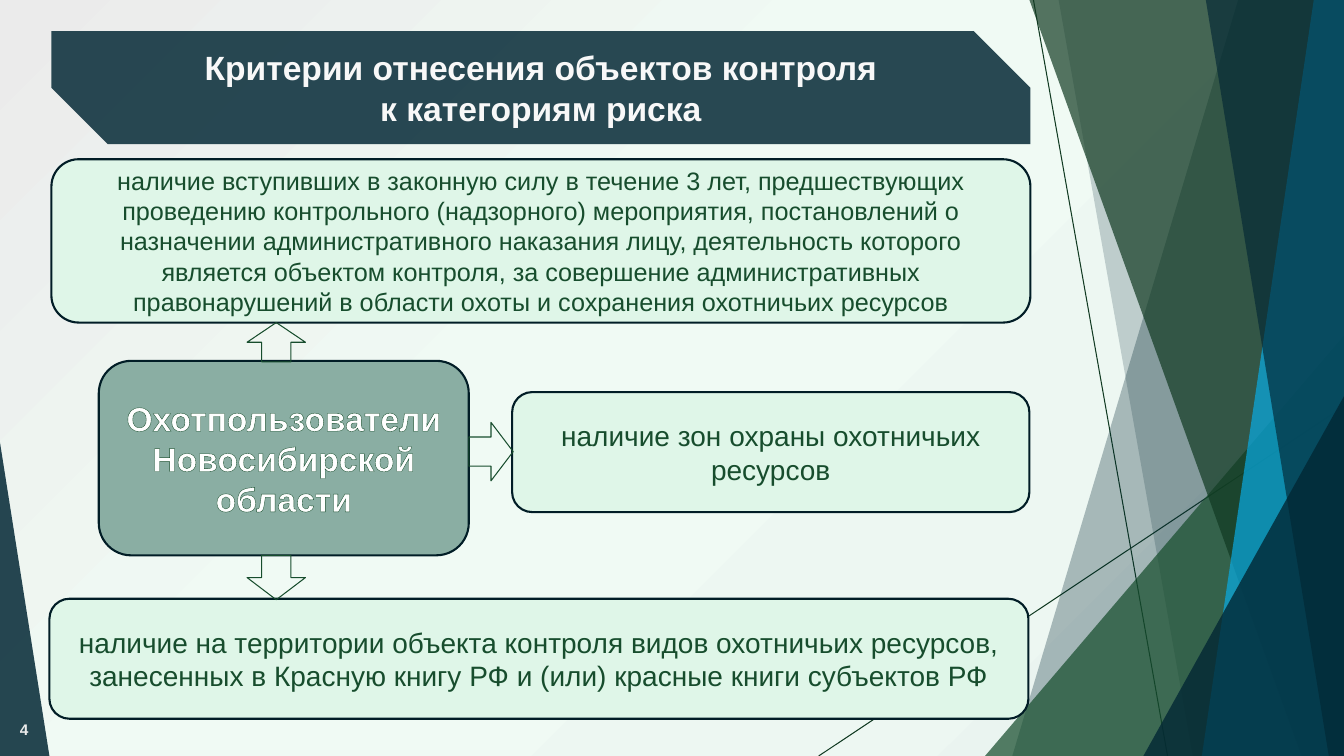
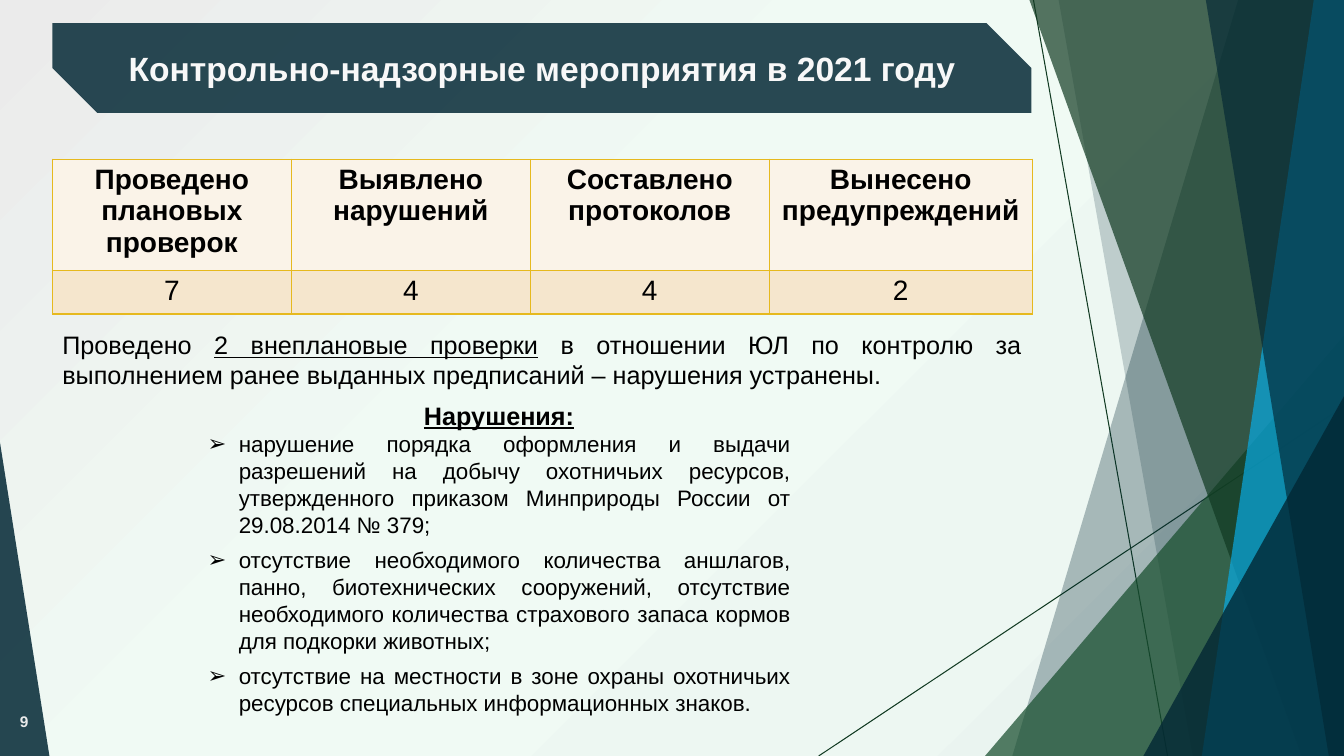
from pptx import Presentation
from pptx.dml.color import RGBColor
from pptx.enum.shapes import MSO_CONNECTOR, MSO_SHAPE
from pptx.enum.text import MSO_ANCHOR, PP_ALIGN
from pptx.oxml import parse_xml
from pptx.oxml.ns import nsdecls, qn
from pptx.util import Inches, Pt
from lxml.etree import SubElement

# Colours and font
NAVY = RGBColor(0x02, 0x27, 0x34)
EDGE = RGBColor(0x01, 0x1D, 0x26)
GREEN = RGBColor(0x17, 0x4D, 0x2D)
DARK = RGBColor(0x11, 0x3A, 0x22)
BLUE = RGBColor(0x09, 0xAB, 0xE4)
MINT = RGBColor(0xDF, 0xF6, 0xE8)
SAGE = RGBColor(0x8A, 0xAE, 0xA3)
CREAM = RGBColor(0xFA, 0xF3, 0xE8)
SAND = RGBColor(0xF5, 0xE6, 0xCD)
GOLD = RGBColor(0xE6, 0xB9, 0x1E)
PALE = RGBColor(0xF8, 0xF8, 0xF8)
GRAY = RGBColor(0xEB, 0xEB, 0xEB)
WHITE = RGBColor(0xFF, 0xFF, 0xFF)
BLACK = RGBColor(0, 0, 0)
FONT = "Arial"
WIDE, HIGH = 13.33, 7.5
STOPS = [(0, "EAF4F0"), (58, "F0FAF4"), (100, "EBEBEB")]

# Side decoration, from back to front
LINES = [((10.25, 0), (11.58, HIGH)), ((WIDE, 4.03), (8.12, HIGH))]
# Bands reach the right edge: top x, bottom x, colour, opacity
# Triangles stand on the bottom edge: left, top, width, apex, colour, opacity
DECOR = [
    ("band", 12.28, 10.04, NAVY, 30),
    ("band", 10.5, 11.83, NAVY, 20),
    ("peak", 9.77, 3.33, 3.56, 1, GREEN, 72),
    ("band", 10.21, 12.91, DARK, 70),
    ("band", 13.03, 11.92, BLUE, 70),
    ("band", 11.96, 13.18, NAVY, 65),
    ("peak", 11.34, 3.93, 1.99, 1, NAVY, 80),
    ("peak", 0, 4.39, 0.49, 0, NAVY, 85),
]

# Slide 1 content
RISK = ["Критерии отнесения объектов контроля", "к категориям риска"]
USERS = ((0.98, 3.58, 3.67, 1.93), "Охотпользователи Новосибирской области")
RULES = [
    ((0.49, 5.94, 9.71, 1.19), 20,
     "наличие на территории объекта контроля видов охотничьих ресурсов, "
     "занесенных в Красную книгу РФ и (или) красные книги субъектов РФ"),
    ((0.51, 1.58, 9.71, 1.62), 18,
     "наличие вступивших в законную силу в течение 3 лет, предшествующих "
     "проведению контрольного (надзорного) мероприятия, постановлений о "
     "назначении административного наказания лицу, деятельность которого "
     "является объектом контроля, за совершение административных "
     "правонарушений в области охоты и сохранения охотничьих ресурсов"),
    ((5.08, 3.89, 5.13, 1.19), 20, "наличие зон охраны охотничьих ресурсов"),
]
ARROWS = [((2.45, 5.51, 0.58, 0.44), 0), ((2.45, 3.2, 0.58, 0.39), 180),
          ((4.58, 4.26, 0.58, 0.44), 270)]

# Slide 2 content
CHECKS = ["Контрольно-надзорные мероприятия в 2021 году"]
TABLE = [["Проведено плановых проверок", "Выявлено нарушений",
          "Составлено протоколов", "Вынесено предупреждений"],
         ["7", "4", "4", "2"]]
COLS = [2.37, 2.37, 2.37, 2.61]
ROWS = [1.03, 0.41]
EXTRA = [("Проведено ", False), ("2 внеплановые проверки", True),
         (" в отношении ЮЛ по контролю за выполнением ранее выданных "
          "предписаний – нарушения устранены.", False)]
FAULTS = [
    "нарушение порядка оформления и выдачи разрешений на добычу охотничьих "
    "ресурсов, утвержденного приказом Минприроды России от 29.08.2014 № 379;",
    "отсутствие необходимого количества аншлагов, панно, биотехнических "
    "сооружений, отсутствие необходимого количества страхового запаса кормов "
    "для подкорки животных;",
    "отсутствие на местности в зоне охраны охотничьих ресурсов специальных "
    "информационных знаков.",
]


def inch(box):
    return [Inches(v) for v in box]


def write(frame, text, size=18, color=BLACK, bold=False, line=False,
          align=PP_ALIGN.CENTER, after=0, bullet=None, rim=None, more=False):
    """Add one paragraph; text is a string or (string, underlined) runs."""
    para = frame.add_paragraph() if more else frame.paragraphs[0]
    para.alignment = align
    if after:
        para.space_after = Pt(after)
    if bullet:
        props = para._p.get_or_add_pPr()
        props.set("marL", str(Inches(0.31)))
        props.set("indent", str(-Inches(0.31)))
        SubElement(props, qn("a:buFont")).set("typeface", FONT)
        SubElement(props, qn("a:buChar")).set("char", bullet)
    for words, under in [(text, line)] if isinstance(text, str) else text:
        run = para.add_run()
        run.text = words
        font = run.font
        font.name, font.size, font.bold = FONT, Pt(size), bold
        font.underline = under
        font.color.rgb = color
        if rim:
            run._r.get_or_add_rPr().insert(0, stroke("ln", rim, 0.5))


def stroke(tag, color, width):
    return parse_xml(
        f'<a:{tag} {nsdecls("a")} w="{Pt(width)}"><a:solidFill>'
        f'<a:srgbClr val="{color}"/></a:solidFill></a:{tag}>')


def style(shape, fill=None, alpha=100, edge=None, width=1.5):
    shape.shadow.inherit = False
    if fill is None:
        shape.fill.background()
    else:
        shape.fill.solid()
        shape.fill.fore_color.rgb = fill
        if alpha < 100:
            tone = shape._element.spPr.find(".//" + qn("a:srgbClr"))
            SubElement(tone, qn("a:alpha")).set("val", str(alpha * 1000))
    if edge is None:
        shape.line.fill.background()
    else:
        shape.line.color.rgb = edge
        shape.line.width = Pt(width)


def put(slide, kind, box, **look):
    shape = slide.shapes.add_shape(kind, *inch(box))
    style(shape, **look)
    shape.text_frame.word_wrap = True
    shape.text_frame.vertical_anchor = MSO_ANCHOR.MIDDLE
    return shape


def label(slide, box, anchor=MSO_ANCHOR.TOP):
    frame = slide.shapes.add_textbox(*inch(box)).text_frame
    frame.word_wrap = True
    frame.vertical_anchor = anchor
    return frame


def paint(master):
    """Give the master its radial background."""
    master.background.fill.gradient()
    old = master._element.find(".//" + qn("p:bgPr") + "/" + qn("a:gradFill"))
    stops = "".join(f'<a:gs pos="{pos * 1000}"><a:srgbClr val="{tone}"/></a:gs>'
                    for pos, tone in STOPS)
    old.getparent().replace(old, parse_xml(
        f'<a:gradFill {nsdecls("a")} rotWithShape="1"><a:gsLst>{stops}</a:gsLst>'
        '<a:path path="circle"><a:fillToRect l="100000" t="100000"/></a:path>'
        '</a:gradFill>'))


def start(deck, title, box, page, level):
    """Add a slide with decoration, title band and page number."""
    slide = deck.slides.add_slide(deck.slide_layouts[6])
    for head, tail in LINES:
        line = slide.shapes.add_connector(MSO_CONNECTOR.STRAIGHT,
                                          *inch(head + tail))
        line.line.color.rgb = DARK
        line.line.width = Pt(0.75)
        SubElement(line._element.spPr, qn("a:effectLst"))
    for kind, *part, color, alpha in DECOR:
        if kind == "band":
            top, base = part
            pen = slide.shapes.build_freeform(Inches(top), 0)
            pen.add_line_segments([inch(p) for p in (
                (WIDE, 0), (WIDE, HIGH), (base, HIGH))])
            style(pen.convert_to_shape(), color, alpha)
        else:
            left, top, width, apex = part
            peak = put(slide, MSO_SHAPE.ISOSCELES_TRIANGLE,
                       (left, top, width, HIGH - top), fill=color, alpha=alpha)
            peak.adjustments[0] = apex
    band = put(slide, MSO_SHAPE.SNIP_2_DIAG_RECTANGLE, box, fill=NAVY, alpha=84)
    band.adjustments[0], band.adjustments[1] = 0, 0.5
    for i, text in enumerate(title):
        write(band.text_frame, text, size=24, color=PALE, bold=True, more=i > 0)
    write(label(slide, (0, level, 0.38, 0.4), MSO_ANCHOR.MIDDLE), page,
          size=11, color=GRAY, bold=True, align=PP_ALIGN.RIGHT)
    return slide


def risks(deck):
    slide = start(deck, RISK, (0.51, 0.31, 9.71, 1.12), "4", 7.04)
    box, text = USERS
    hub = put(slide, MSO_SHAPE.ROUNDED_RECTANGLE, box, fill=SAGE, edge=EDGE)
    write(hub.text_frame, text, size=24, color=WHITE, bold=True, rim=GREEN)
    for box, size, text in RULES:
        rule = put(slide, MSO_SHAPE.ROUNDED_RECTANGLE, box, fill=MINT, edge=EDGE)
        write(rule.text_frame, text, size=size, color=GREEN)
    for box, turn in ARROWS:
        arrow = put(slide, MSO_SHAPE.DOWN_ARROW, box, edge=GREEN, width=0.75)
        arrow.rotation = turn


def checks(deck):
    slide = start(deck, CHECKS, (0.52, 0.23, 9.71, 0.89), "9", 6.96)
    # Results table
    table = slide.shapes.add_table(
        len(ROWS), len(COLS), *inch((0.52, 1.58, sum(COLS), sum(ROWS)))).table
    for col, width in zip(table.columns, COLS):
        col.width = Inches(width)
    for r, (texts, height) in enumerate(zip(TABLE, ROWS)):
        table.rows[r].height = Inches(height)
        for c, text in enumerate(texts):
            cell = table.cell(r, c)
            cell.fill.solid()
            cell.fill.fore_color.rgb = SAND if r else CREAM
            write(cell.text_frame, text, size=20, bold=r == 0)
            for i, side in enumerate(("lnL", "lnR", "lnT", "lnB")):
                cell._tc.get_or_add_tcPr().insert(i, stroke(side, GOLD, 1))
    # Notes under the table
    write(label(slide, (0.52, 3.22, 9.71, 0.71)), EXTRA,
          align=PP_ALIGN.JUSTIFY)
    faults = label(slide, (1.96, 3.92, 5.98, 3.26))
    write(faults, "Нарушения:", bold=True, line=True)
    for text in FAULTS:
        write(faults, text, size=16, align=PP_ALIGN.JUSTIFY, after=6,
              bullet="➢", more=True)


def main():
    deck = Presentation()
    deck.slide_width, deck.slide_height = inch((WIDE, HIGH))
    paint(deck.slide_master)
    risks(deck)
    checks(deck)
    deck.save("out.pptx")


if __name__ == "__main__":
    main()
